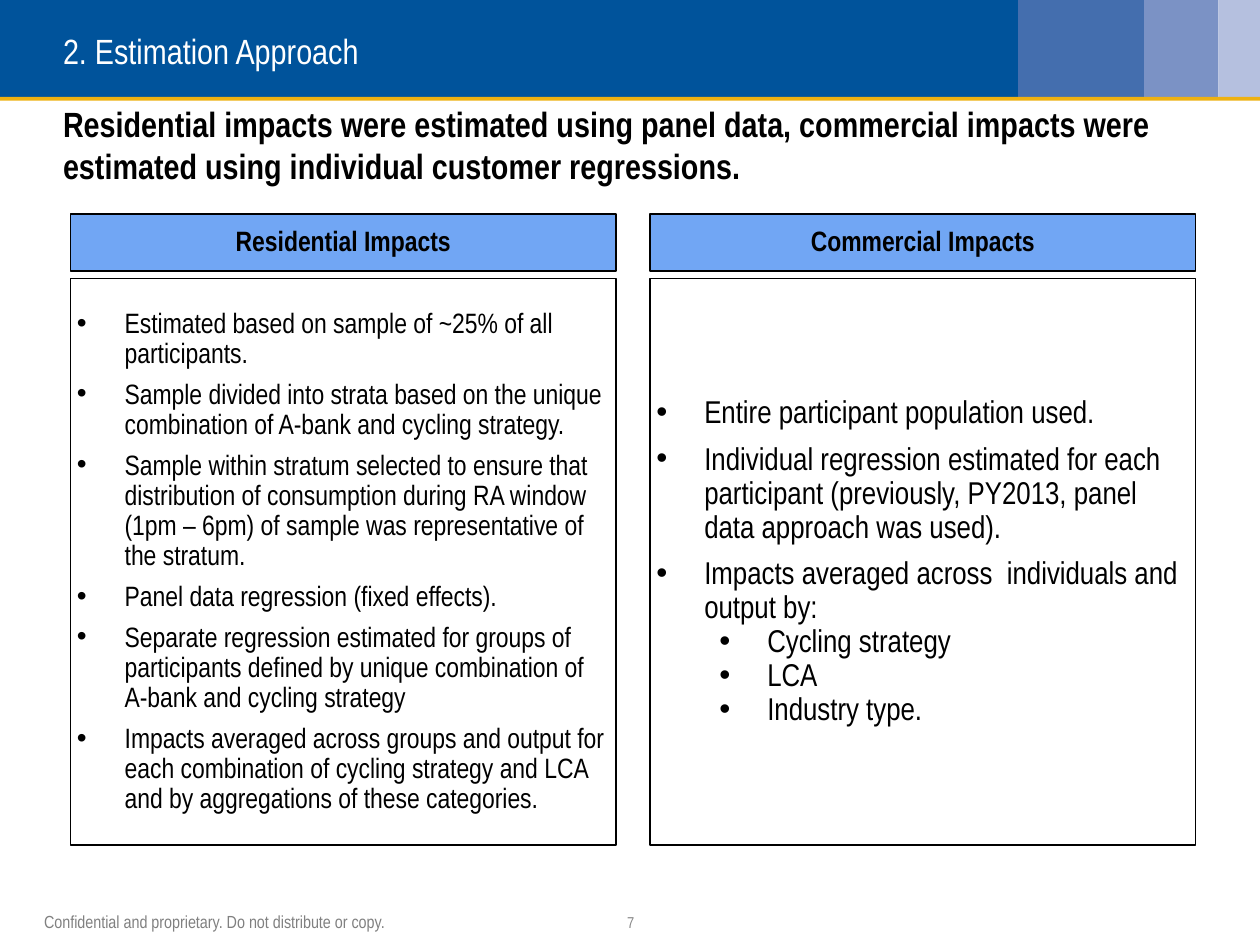
from lxml import etree
from pptx import Presentation
from pptx.dml.color import RGBColor
from pptx.enum.shapes import MSO_SHAPE
from pptx.enum.text import MSO_ANCHOR, MSO_AUTO_SIZE, PP_ALIGN
from pptx.oxml.ns import qn
from pptx.util import Inches, Pt

RECT = MSO_SHAPE.RECTANGLE
MIDDLE = MSO_ANCHOR.MIDDLE
NO_AUTOFIT = MSO_AUTO_SIZE.NONE
LEFT, CENTER = PP_ALIGN.LEFT, PP_ALIGN.CENTER

COLORS = {
    "navy": "00539B", "blue": "446EAE", "periwinkle": "7B92C5", "pale": "B5C0DF",
    "gold": "EEB111", "header": "71A6F4", "white": "FFFFFF", "black": "000000",
    "footer": "808080", "number": "898989",
}
MARGIN = 0.5
BAND_HEIGHT = 0.77
COLUMN_LEFT, COLUMN_WIDTH, COLUMN_PITCH = 0.56, 4.33, 4.6
HEADER_TOP, HEADER_HEIGHT = 1.7, 0.45
PANEL_TOP, PANEL_HEIGHT = 2.21, 4.5
HANG = 0.38


def add_box(left, top, width, height, fill, outlined=False):
    box = slide.shapes.add_shape(RECT, Inches(left), Inches(top), Inches(width), Inches(height))
    box.shadow.inherit = False
    box.fill.solid()
    box.fill.fore_color.rgb = RGBColor.from_string(COLORS[fill])
    if outlined:
        box.line.color.rgb = RGBColor.from_string(COLORS["black"])
        box.line.width = Pt(1)
    else:
        box.line.fill.background()
    return box


def write(shape, lines, size, color="black", bold=False, align=LEFT, inset=0,
          spacing=1.0, before=0, bulleted=False, wrap=True):
    frame = shape.text_frame
    frame.auto_size = NO_AUTOFIT
    frame.word_wrap = wrap
    frame.vertical_anchor = MIDDLE
    frame.margin_left = frame.margin_right = Inches(inset)
    frame.margin_top = frame.margin_bottom = Inches(inset)
    for index, (level, text) in enumerate(lines):
        paragraph = frame.paragraphs[0] if index == 0 else frame.add_paragraph()
        props = paragraph._p.get_or_add_pPr()
        props.set("marL", str(Inches(HANG + level * 0.5) if bulleted else 0))
        props.set("indent", str(Inches(-HANG) if bulleted else 0))
        if bulleted:
            etree.SubElement(props, qn("a:buFont")).set("typeface", "Arial")
            etree.SubElement(props, qn("a:buChar")).set("char", "•")
        else:
            etree.SubElement(props, qn("a:buNone"))
        paragraph.level = level
        paragraph.alignment = align
        paragraph.line_spacing = spacing
        paragraph.space_before = Pt(before if index and not level else 0)
        run = paragraph.add_run()
        run.text = text
        run.font.name = "Arial Narrow"
        run.font.size = Pt(size)
        run.font.bold = bold
        run.font.color.rgb = RGBColor.from_string(COLORS[color])


deck = Presentation()
deck.slide_width, deck.slide_height = Inches(10), Inches(7.5)
slide = deck.slides.add_slide(deck.slide_layouts[1])
title, headline = slide.placeholders

band_edges = [0, 8.08, 9.08, 9.67, 10]
for start, end, fill in zip(band_edges, band_edges[1:], ["navy", "blue", "periwinkle", "pale"]):
    add_box(start, 0, end - start, BAND_HEIGHT, fill)
add_box(0, BAND_HEIGHT, 10, 0.03, "gold")

for placeholder, top, height in [(title, 0, 0.8), (headline, 0.8, 0.7)]:
    placeholder.left, placeholder.top = Inches(MARGIN), Inches(top)
    placeholder.width, placeholder.height = Inches(10 - 2 * MARGIN), Inches(height)
    slide.shapes._spTree.append(placeholder._element)
write(title, [(0, "2. Estimation Approach")], 20, "white")
write(headline, [(0, "Residential impacts were estimated using panel data, commercial impacts "
                     "were estimated using individual customer regressions.")], 20, bold=True)

footers = [
    (0.35, 2.48, "Confidential and proprietary. Do not distribute or copy.", 10, "footer", LEFT),
    (4.94, 0.13, "7", 9, "number", CENTER),
]
for left, width, text, size, color, align in footers:
    footer = slide.shapes.add_textbox(Inches(left), Inches(7.24), Inches(width), Inches(0.15))
    write(footer, [(0, text)], size, color, align=align, wrap=False)

columns = [
    ("Residential Impacts", 16, 6, [
        (0, "Estimated based on sample of ~25% of all participants."),
        (0, "Sample divided into strata based on the unique combination of A-bank and "
            "cycling strategy."),
        (0, "Sample within stratum selected to ensure that distribution of consumption "
            "during RA window (1pm – 6pm) of sample was representative of the stratum."),
        (0, "Panel data regression (fixed effects)."),
        (0, "Separate regression estimated for groups of participants defined by unique "
            "combination of A-bank and cycling strategy"),
        (0, "Impacts averaged across groups and output for each combination of cycling "
            "strategy and LCA and by aggregations of these categories."),
    ]),
    ("Commercial Impacts", 18, 7, [
        (0, "Entire participant population used."),
        (0, "Individual regression estimated for each participant (previously, PY2013, "
            "panel data approach was used)."),
        (0, "Impacts averaged across  individuals and output by:"),
        (1, "Cycling strategy"),
        (1, "LCA"),
        (1, "Industry type."),
    ]),
]
for column, (heading, size, before, points) in enumerate(columns):
    left = COLUMN_LEFT + column * COLUMN_PITCH
    panel = add_box(left, PANEL_TOP, COLUMN_WIDTH, PANEL_HEIGHT, "white", outlined=True)
    write(panel, points, size, inset=0.05, spacing=0.9, before=before, bulleted=True)
    header = add_box(left, HEADER_TOP, COLUMN_WIDTH, HEADER_HEIGHT, "header", outlined=True)
    write(header, [(0, heading)], 16, bold=True, align=CENTER, inset=0.05, spacing=0.9)

deck.save("out.pptx")
